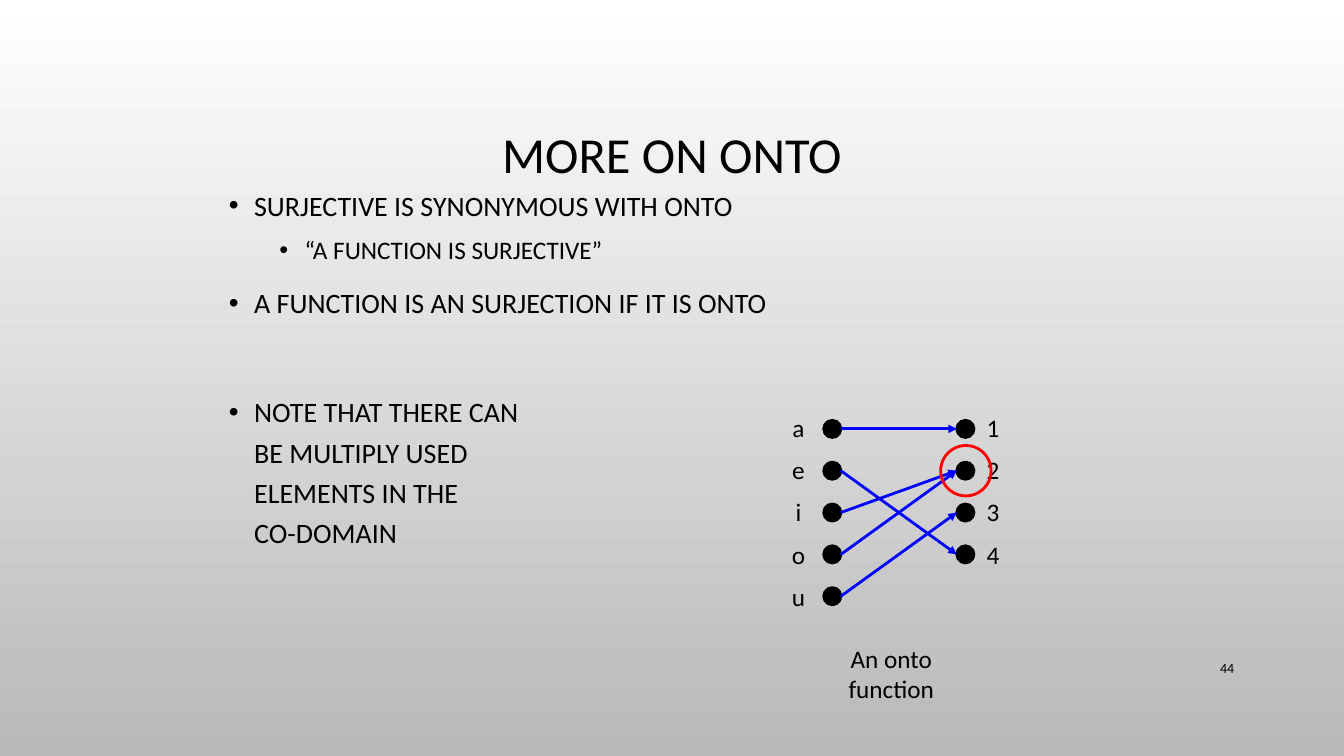
from lxml import etree
from pptx import Presentation
from pptx import util as u
from pptx.dml.color import RGBColor
from pptx.enum import shapes, text
from pptx.oxml import ns

# Content
TITLE = "MORE ON ONTO"
# text, level, size, space before
POINTS = [
    ("SURJECTIVE IS SYNONYMOUS WITH ONTO", 0, 20, 0),
    ("“A FUNCTION IS SURJECTIVE”", 1, 18, 5),
    ("A FUNCTION IS AN SURJECTION IF IT IS ONTO", 0, 20, 10),
    ("NOTE THAT THERE CAN\vBE MULTIPLY USED\vELEMENTS IN THE\vCO-DOMAIN", 0, 20, 49),
]
DOMAIN = ["a", "e", "i", "o", "u"]
CODOMAIN = ["1", "2", "3", "4"]
MAPPING = {"a": "1", "e": "4", "i": "2", "o": "2", "u": "3"}
CAPTION = "An onto function"
PAGE_NUMBER = "44"

# Diagram grid
DOT = 0.17
DOMAIN_X, CODOMAIN_X = 8.17, 9.49
FIRST_Y, PITCH = 4.17, 0.415
BLACK, BLUE, RED = "000000", "0000FF", "FF0000"
ALIGN = text.PP_ALIGN


def color(value):
    return RGBColor.from_string(value)


def place(item, left, top, width, height):
    bounds = {"left": left, "top": top, "width": width, "height": height}
    for name, value in bounds.items():
        setattr(item, name, u.Inches(value))


def format_frame(frame, **values):
    for name, value in values.items():
        setattr(frame, name, value)


def write(para, words, size, **values):
    para.text = words
    for name, value in values.items():
        setattr(para, name, value)
    for span in para.runs:
        for name, value in {"name": "Calibri", "size": u.Pt(size)}.items():
            setattr(span.font, name, value)
        span.font.color.rgb = color(BLACK)
    for line_break in para._p.findall(ns.qn("a:br")):
        etree.SubElement(line_break, ns.qn("a:rPr"), sz=str(size * 100))


def add_bullet(para, level):
    props = para._p.get_or_add_pPr()
    props.set("marL", str(u.Inches(0.25 + 0.5 * level)))
    props.set("indent", str(u.Inches(-0.25)))
    bullet_color = etree.SubElement(props, ns.qn("a:buClr"))
    etree.SubElement(bullet_color, ns.qn("a:srgbClr"), val=BLACK)
    etree.SubElement(props, ns.qn("a:buFont"), typeface="Arial")
    etree.SubElement(props, ns.qn("a:buChar"), char="•")


def add_text(page, bounds, lines, size, align, spacing=1.0, **values):
    box = page.shapes.add_textbox(*map(u.Inches, bounds))
    format_frame(box.text_frame, **values)
    for index, words in enumerate(lines):
        para = box.text_frame.add_paragraph() if index else box.text_frame.paragraphs[0]
        write(para, words, size, alignment=align, line_spacing=spacing)


def add_circle(page, left, top, diameter, line, fill=None):
    circle = page.shapes.add_shape(
        shapes.MSO_SHAPE.OVAL, *map(u.Inches, (left, top, diameter, diameter)))
    circle.shadow.inherit = False
    if fill:
        circle.fill.solid()
        circle.fill.fore_color.rgb = color(fill)
    else:
        circle.fill.background()
    circle.line.color.rgb = color(line)
    circle.line.width = u.Pt(2)


def add_arrow(page, *ends):
    arrow = page.shapes.add_connector(shapes.MSO_CONNECTOR.STRAIGHT, *map(u.Inches, ends))
    arrow.line.color.rgb = color(BLUE)
    arrow.line.width = u.Pt(2)
    etree.SubElement(arrow.line._get_or_add_ln(), ns.qn("a:tailEnd"), type="triangle")
    etree.SubElement(arrow._element.spPr, ns.qn("a:effectLst"))


def row_top(index):
    return FIRST_Y + PITCH * index


def row_center(index):
    return row_top(index) + DOT / 2


def main():
    deck = Presentation()
    deck.slide_width, deck.slide_height = u.Inches(13.33), u.Inches(7.5)
    page = deck.slides.add_slide(deck.slide_layouts[1])

    # Background
    backdrop = page.background.fill
    backdrop.gradient()
    backdrop.gradient_angle = 270
    for stop, shade in zip(backdrop.gradient_stops, ("FFFFFF", "B9B9B9")):
        stop.color.rgb = color(shade)

    # Title and bullet list
    title, body = page.shapes.title, page.placeholders[1]
    place(title, 1, 0.68, 11.33, 1.75)
    format_frame(title.text_frame, vertical_anchor=text.MSO_ANCHOR.MIDDLE,
                 auto_size=text.MSO_AUTO_SIZE.NONE)
    write(title.text_frame.paragraphs[0], TITLE, 36, alignment=ALIGN.CENTER, line_spacing=0.9)

    place(body, 2.17, 1.75, 9, 4.95)
    format_frame(body.text_frame, vertical_anchor=text.MSO_ANCHOR.TOP,
                 auto_size=text.MSO_AUTO_SIZE.NONE)
    for index, (words, level, size, before) in enumerate(POINTS):
        para = body.text_frame.add_paragraph() if index else body.text_frame.paragraphs[0]
        add_bullet(para, level)
        write(para, words, size, level=level, line_spacing=1.2, space_before=u.Pt(before))

    # Dots and labels of both sets
    for names, dot_x, label_x in ((CODOMAIN, CODOMAIN_X, 9.68), (DOMAIN, DOMAIN_X, 7.75)):
        for index in range(len(names)):
            add_circle(page, dot_x, row_top(index), DOT, BLACK, BLACK)
        add_text(page, (label_x, 3.92, 0.34, 2.2), names, 18, ALIGN.CENTER, 1.4,
                 word_wrap=False)

    # Mapping arrows
    for source, target in MAPPING.items():
        add_arrow(page, DOMAIN_X + DOT, row_center(DOMAIN.index(source)),
                  CODOMAIN_X, row_center(CODOMAIN.index(target)))

    # Caption, page number and highlight of the repeated element
    add_text(page, (7.94, 6.33, 1.8, 0.4), [CAPTION], 18, ALIGN.CENTER, word_wrap=True,
             margin_left=u.Inches(0.4), margin_right=u.Inches(0.4))
    add_text(page, (11.5, 6.43, 0.84, 0.4), [PAGE_NUMBER], 10, ALIGN.RIGHT, word_wrap=True,
             vertical_anchor=text.MSO_ANCHOR.MIDDLE)
    add_circle(page, 9.33, 4.42, 0.5, RED)

    deck.save("out.pptx")


if __name__ == "__main__":
    main()
